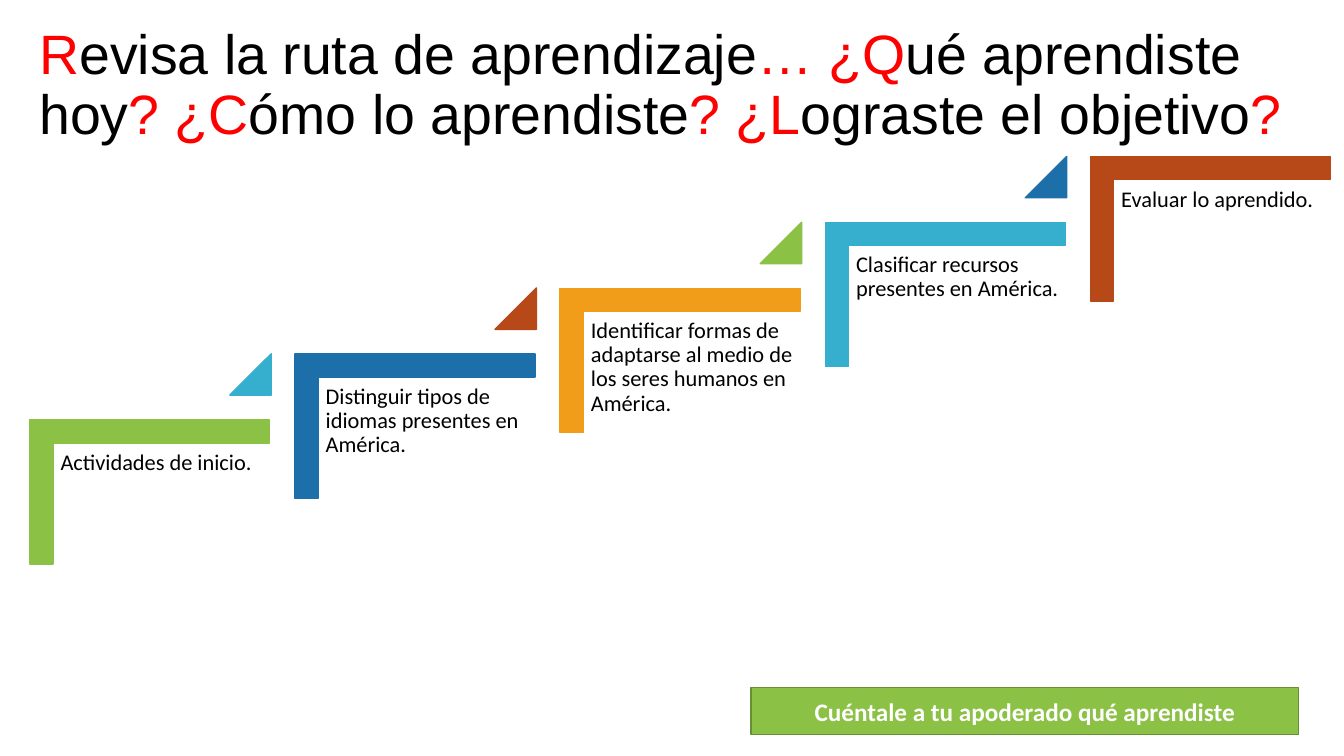
import pptx
import pptx.dml.color
import pptx.enum.shapes
import pptx.enum.text
import pptx.util

SHAPE = pptx.enum.shapes.MSO_SHAPE
ALIGN = pptx.enum.text.PP_ALIGN
ANCHOR = pptx.enum.text.MSO_ANCHOR

COLORS = {
    "black": "000000", "white": "FFFFFF", "red": "FF0000",
    "green": "8BC145", "dark_green": "678F33", "blue": "1D6FA9",
    "orange": "F19D19", "cyan": "36AFCE", "rust": "B74919",
}

# Each step: text, bracket colour, triangle colour
STEPS = [
    ("Actividades de inicio.", "green", "cyan"),
    ("Distinguir tipos de idiomas presentes en América.", "blue", "rust"),
    ("Identificar formas de adaptarse al medio de los seres humanos en América.",
     "orange", "green"),
    ("Clasificar recursos presentes en América.", "cyan", "blue"),
    ("Evaluar lo aprendido.", "rust", None),
]
# Shift from one step to the next, in percent of the slide's width and height
STEP_X, STEP_Y = 19.73, -8.7

# Red and black pieces take turns, red first
TITLE = ["R", "evisa la ruta de aprendizaje", "… ¿Q", "ué aprendiste hoy", "? ¿C",
         "ómo lo aprendiste", "? ¿L", "ograste el objetivo", "?"]


class Deck:
    """Slide builder; every box is left, top, width, height in percent of the slide."""

    def __init__(self, prs):
        self.prs = prs
        self.slide = prs.slides.add_slide(prs.slide_layouts[5])

    def emu(self, box):
        w, h = self.prs.slide_width, self.prs.slide_height
        return [int(share * side / 100) for share, side in zip(box, (w, h, w, h))]

    def rgb(self, name):
        return pptx.dml.color.RGBColor.from_string(COLORS[name])

    def style(self, run, size, color, font="Calibri", bold=False):
        run.font.name = font
        run.font.size = pptx.util.Pt(size)
        run.font.bold = bold
        run.font.color.rgb = self.rgb(color)

    def title(self, pieces, box):
        sp = self.slide.shapes.title
        sp.left, sp.top, sp.width, sp.height = self.emu(box)
        tf = sp.text_frame
        tf.auto_size = pptx.enum.text.MSO_AUTO_SIZE.NONE
        tf.vertical_anchor = ANCHOR.MIDDLE
        p = tf.paragraphs[0]
        p.alignment = ALIGN.LEFT
        p.line_spacing = 0.9
        for i, piece in enumerate(pieces):
            r = p.add_run()
            r.text = piece
            self.style(r, 39.6, "black" if i % 2 else "red", "Arial")

    def shape(self, kind, box, fill, line=None, adjustments=(), rotation=0):
        sp = self.slide.shapes.add_shape(kind, *self.emu(box))
        sp.shadow.inherit = False
        sp.rotation = rotation
        for i, value in enumerate(adjustments):
            sp.adjustments[i] = value
        sp.fill.solid()
        sp.fill.fore_color.rgb = self.rgb(fill)
        sp.line.color.rgb = self.rgb(line or fill)
        sp.line.width = pptx.util.Pt(1)
        return sp

    def banner(self, text, box):
        tf = self.shape(SHAPE.RECTANGLE, box, "green", "dark_green").text_frame
        tf.text = text
        tf.word_wrap = True
        tf.vertical_anchor = ANCHOR.MIDDLE
        p = tf.paragraphs[0]
        p.alignment = ALIGN.CENTER
        self.style(p.runs[0], 18, "white", bold=True)

    def label(self, text, box):
        tf = self.slide.shapes.add_textbox(*self.emu(box)).text_frame
        tf.text = text
        tf.word_wrap = True
        tf.margin_left = tf.margin_right = pptx.util.Inches(0.07)
        tf.margin_top = tf.margin_bottom = pptx.util.Inches(0.07)
        p = tf.paragraphs[0]
        p.line_spacing = 0.9
        self.style(p.runs[0], 16, "black")

    def step(self, index, text, bracket, triangle):
        dx, dy = index * STEP_X, index * STEP_Y
        self.shape(SHAPE.CORNER, (5.78 + dx, 49.2 + dy, 10.73, 31.73), bracket,
                   adjustments=(0.16, 0.16), rotation=90)
        self.label(text, (3.98 + dx, 58.7 + dy, 16.13, 25.07))
        if triangle:
            self.shape(SHAPE.ISOSCELES_TRIANGLE, (17.1 + dx, 46.8 + dy, 3.08, 5.47),
                       triangle, adjustments=(1,))


def main():
    prs = pptx.Presentation()
    prs.slide_width = pptx.util.Inches(13.33)
    prs.slide_height = pptx.util.Inches(7.5)
    deck = Deck(prs)
    deck.title(TITLE, (2.18, 1.73, 95.72, 19.33))
    deck.banner("Cuéntale a tu apoderado qué aprendiste", (55.89, 90.93, 40.74, 6.27))
    for i, step in enumerate(STEPS):
        deck.step(i, *step)
    prs.save("out.pptx")


if __name__ == "__main__":
    main()
